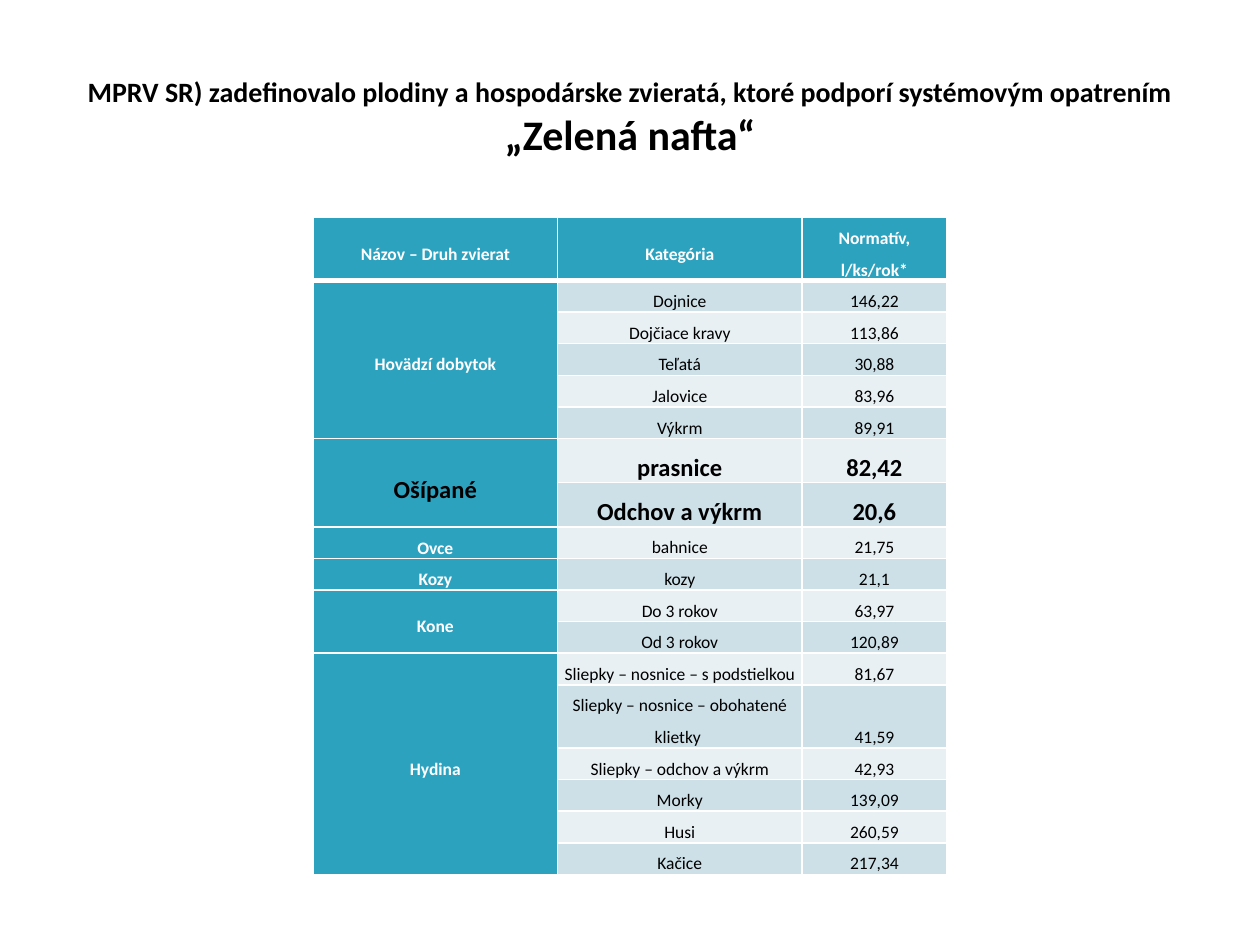
from dataclasses import dataclass

from lxml import etree
from pptx import Presentation
from pptx.dml.color import RGBColor
from pptx.enum.text import MSO_ANCHOR, PP_ALIGN
from pptx.oxml.ns import qn
from pptx.table import Table, _Cell
from pptx.text.text import _Run
from pptx.util import Inches, Pt

MIDDLE, BOTTOM = MSO_ANCHOR.MIDDLE, MSO_ANCHOR.BOTTOM
CENTER = PP_ALIGN.CENTER


@dataclass(frozen=True)
class Theme:
    font: str = "Calibri"
    teal: str = "2DA2BF"
    bands: tuple[str, str] = ("CDE0E8", "E8F0F4")
    white: str = "FFFFFF"
    black: str = "000000"
    body: int = 10
    emphasis: int = 14
    title: int = 16
    programme: int = 24
    rule: int = 1
    header_rule: int = 3


@dataclass(frozen=True)
class Animal:
    name: str
    norms: tuple[tuple[str, str], ...]
    category_anchor: MSO_ANCHOR = BOTTOM
    emphasized: bool = False


THEME = Theme()
SLIDE_W, SLIDE_H = Inches(10), Inches(7.5)
COLUMN_SHARES = (0.194, 0.194, 0.115)
TABLE_TOP = 0.23
LINE_SHARE = 0.25 / 7.5
TWO_LINE_SHARE = 0.49 / 7.5
TWO_LINE_ROWS = (0, 13)

TITLE = (
    ("MPRV SR) zadefinovalo plodiny a hospodárske zvieratá, ktoré podporí systémovým opatrením ", THEME.title),
    ("„Zelená nafta“", THEME.programme),
)
HEADERS = ("Názov – Druh zvierat", "Kategória", "Normatív, l/ks/rok*")
ANIMALS = (
    Animal("Hovädzí dobytok", (
        ("Dojnice", "146,22"),
        ("Dojčiace kravy", "113,86"),
        ("Teľatá", "30,88"),
        ("Jalovice", "83,96"),
        ("Výkrm", "89,91"),
    ), MIDDLE),
    Animal("Ošípané", (("prasnice", "82,42"), ("Odchov a výkrm", "20,6")), MIDDLE, True),
    Animal("Ovce", (("bahnice", "21,75"),)),
    Animal("Kozy", (("kozy", "21,1"),)),
    Animal("Kone", (("Do 3 rokov", "63,97"), ("Od 3 rokov", "120,89"))),
    Animal("Hydina", (
        ("Sliepky – nosnice – s podstielkou", "81,67"),
        ("Sliepky – nosnice – obohatené klietky ", "41,59"),
        ("Sliepky – odchov a výkrm", "42,93"),
        ("Morky", "139,09"),
        ("Husi", "260,59"),
        ("Kačice", "217,34"),
    )),
)


def style_run(run: _Run, size: int, color: str, bold: bool) -> None:
    run.font.name = THEME.font
    run.font.size = Pt(size)
    run.font.bold = bold
    run.font.color.rgb = RGBColor.from_string(color)


def draw_borders(cell: _Cell, top: int, bottom: int) -> None:
    """Put white rules, in points, ahead of the cell's fill as the schema asks."""
    properties = cell._tc.get_or_add_tcPr()
    widths = {"a:lnL": THEME.rule, "a:lnR": THEME.rule, "a:lnT": top, "a:lnB": bottom}
    for position, (side, width) in enumerate(widths.items()):
        line = etree.Element(qn(side), w=str(Pt(width)))
        fill = etree.SubElement(line, qn("a:solidFill"))
        etree.SubElement(fill, qn("a:srgbClr"), val=THEME.white)
        properties.insert(position, line)


def fill_cell(cell: _Cell, text: str, fill: str, color: str, size: int = THEME.body,
              bold: bool = False, anchor: MSO_ANCHOR = MIDDLE) -> None:
    cell.fill.solid()
    cell.fill.fore_color.rgb = RGBColor.from_string(fill)
    cell.margin_left = cell.margin_right = Inches(0.04)
    cell.margin_top = cell.margin_bottom = 0
    cell.vertical_anchor = anchor
    cell.text_frame.text = text
    paragraph = cell.text_frame.paragraphs[0]
    paragraph.alignment = CENTER
    paragraph.line_spacing = 1.5
    for run in paragraph.runs:
        style_run(run, size, color, bold)


def fill_animal(table: Table, first_row: int, animal: Animal) -> None:
    size = THEME.emphasis if animal.emphasized else THEME.body
    name_color = THEME.black if animal.emphasized else THEME.white
    name_cell = table.cell(first_row, 0)
    last_row = first_row + len(animal.norms) - 1
    if last_row > first_row:
        name_cell.merge(table.cell(last_row, 0))
    fill_cell(name_cell, animal.name, THEME.teal, name_color, size, True)
    for row, (category, norm) in enumerate(animal.norms, first_row):
        band = THEME.bands[(row - 1) % 2]
        for column, text, anchor in ((1, category, animal.category_anchor), (2, norm, BOTTOM)):
            fill_cell(table.cell(row, column), text, band, THEME.black, size,
                      animal.emphasized, anchor)


def add_title(slide) -> None:
    title = slide.shapes.add_textbox(
        int(SLIDE_W * 0.05), int(SLIDE_H * 0.04), int(SLIDE_W * 0.9), int(SLIDE_H / 6))
    frame = title.text_frame
    frame.word_wrap = True
    frame.vertical_anchor = MIDDLE
    paragraph = frame.paragraphs[0]
    paragraph.alignment = CENTER
    for text, size in TITLE:
        run = paragraph.add_run()
        run.text = text
        style_run(run, size, THEME.black, True)


def add_norms_table(slide) -> None:
    row_count = 1 + sum(len(animal.norms) for animal in ANIMALS)
    heights = [int(SLIDE_H * (TWO_LINE_SHARE if row in TWO_LINE_ROWS else LINE_SHARE))
               for row in range(row_count)]
    width_share = sum(COLUMN_SHARES)
    table = slide.shapes.add_table(
        row_count, len(HEADERS), int(SLIDE_W * (1 - width_share) / 2),
        int(SLIDE_H * TABLE_TOP), int(SLIDE_W * width_share), sum(heights)).table
    for column, share in zip(table.columns, COLUMN_SHARES):
        column.width = int(SLIDE_W * share)
    for row, height in zip(table.rows, heights):
        row.height = height

    for column, header in enumerate(HEADERS):
        fill_cell(table.cell(0, column), header, THEME.teal, THEME.white, bold=True)
    first_row = 1
    for animal in ANIMALS:
        fill_animal(table, first_row, animal)
        first_row += len(animal.norms)

    for row in range(row_count):
        top = THEME.header_rule if row == 1 else THEME.rule
        bottom = THEME.header_rule if row == 0 else THEME.rule
        for column in range(len(HEADERS)):
            draw_borders(table.cell(row, column), top, bottom)


def main() -> None:
    deck = Presentation()
    deck.slide_width, deck.slide_height = SLIDE_W, SLIDE_H
    slide = deck.slides.add_slide(deck.slide_layouts[6])
    add_title(slide)
    add_norms_table(slide)
    deck.save("out.pptx")


if __name__ == "__main__":
    main()
